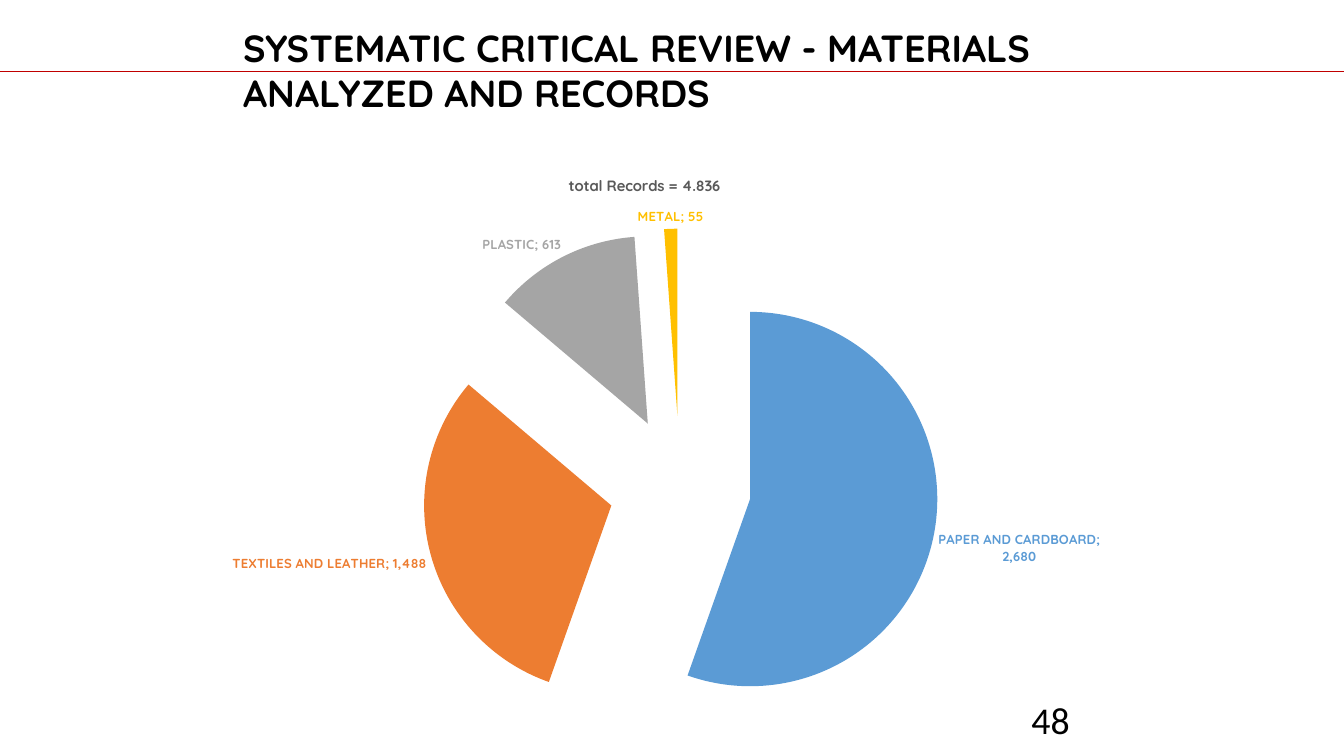
from dataclasses import dataclass

from pptx import Presentation
from pptx.chart.data import CategoryChartData
from pptx.dml.color import RGBColor
from pptx.enum.chart import XL_CHART_TYPE, XL_LABEL_POSITION
from pptx.enum.shapes import MSO_CONNECTOR
from pptx.enum.text import MSO_ANCHOR
from pptx.oxml import parse_xml
from pptx.oxml.ns import nsdecls, qn
from pptx.util import Pt


@dataclass(frozen=True)
class Theme:
    """Colours, fonts and type sizes of the deck."""
    ink: str = "000000"
    muted: str = "595959"
    rule: str = "C00000"
    slices: tuple = ("5B9BD5", "ED7D31", "A5A5A5", "FFC000")
    display: str = "Quicksand"
    plain: str = "Calibri"
    heading: float = 40.5
    caption: float = 16
    label: float = 14
    base: float = 10


THEME = Theme()
MATERIALS = {
    "PAPER AND CARDBOARD": 2680,
    "TEXTILES AND LEATHER": 1488,
    "PLASTIC": 613,
    "METAL": 55,
}


def style_font(font, name, size, color, bold=False):
    """Apply typeface, size, weight and colour to a font."""
    for key, value in {"name": name, "size": Pt(size), "bold": bold}.items():
        setattr(font, key, value)
    font.color.rgb = RGBColor.from_string(color)


def chart_element(tag, content="", **attributes):
    """Return a chart XML element with the given attributes."""
    values = " ".join(f'{key}="{value}"' for key, value in attributes.items())
    return parse_xml(f'<c:{tag} {nsdecls("c")} {values}>{content}</c:{tag}>')


def add_rule(page, box):
    """Draw the thin rule across the box."""
    left, top, width, height = box
    rule = page.shapes.add_connector(
        MSO_CONNECTOR.STRAIGHT, Pt(left), Pt(top), Pt(left + width), Pt(top + height))
    rule.line.width = Pt(0.5)
    rule.line.color.rgb = RGBColor.from_string(THEME.rule)
    properties = rule._element.spPr
    properties.append(parse_xml(f'<a:effectLst {nsdecls("a")}/>'))


def add_text(page, box, text, name, bold=False, anchor=MSO_ANCHOR.TOP):
    """Place heading-sized text in the box."""
    frame = page.shapes.add_textbox(*map(Pt, box)).text_frame
    for key, value in {"word_wrap": True, "vertical_anchor": anchor}.items():
        setattr(frame, key, value)
    span = frame.paragraphs[0].add_run()
    span.text = text
    style_font(span.font, name, THEME.heading, THEME.ink, bold)


def add_caption(chart, text):
    """Give the chart its title."""
    chart.has_title = True
    chart.chart_title.include_in_layout = False
    span = chart.chart_title.text_frame.paragraphs[0].add_run()
    span.text = text
    style_font(span.font, THEME.display, THEME.caption, THEME.muted, True)


def style_labels(labels):
    """Show category and value outside the slices."""
    settings = {
        "show_value": True,
        "show_category_name": True,
        "number_format": "#,##0",
        "number_format_is_linked": False,
        "position": XL_LABEL_POSITION.OUTSIDE_END,
    }
    for key, value in settings.items():
        setattr(labels, key, value)
    style_font(labels.font, THEME.display, THEME.label, THEME.slices[0], True)


def style_slices(series):
    """Colour every slice and its label, and pull the slices apart."""
    style_labels(series.data_labels)
    for index, color in enumerate(THEME.slices):
        point = series.points[index]
        point.format.fill.solid()
        point.format.fill.fore_color.rgb = RGBColor.from_string(color)
        style_font(point.data_label.font, THEME.display, THEME.label, color, True)
        point.data_label.position = XL_LABEL_POSITION.OUTSIDE_END
    for label in series.data_labels._element.findall(qn("c:dLbl")):
        label.find(qn("c:showCatName")).set("val", "1")
        label.insert(1, chart_element("numFmt", formatCode="#,##0", sourceLinked=0))
        label.append(chart_element("separator", "; "))
    first_point = series._element.find(qn("c:dPt"))
    first_point.addprevious(chart_element("explosion", val=38))


def place_plot(chart, x, y, w, h):
    """Fix the plot area as fractions of the chart."""
    modes = '<c:layoutTarget val="inner"/><c:xMode val="edge"/><c:yMode val="edge"/>'
    sizes = "".join(f'<c:{key} val="{value}"/>'
                    for key, value in {"x": x, "y": y, "w": w, "h": h}.items())
    plot_area = chart._chartSpace.chart.plotArea
    for layout in plot_area.findall(qn("c:layout")):
        plot_area.remove(layout)
    plot_area.insert(0, chart_element(
        "layout", f"<c:manualLayout>{modes}{sizes}</c:manualLayout>"))


def add_records_chart(page, box):
    """Place the exploded pie of records by material in the box."""
    data = CategoryChartData(number_format="#,##0")
    data.categories = list(MATERIALS)
    data.add_series("Series 1", list(MATERIALS.values()))
    chart = page.shapes.add_chart(XL_CHART_TYPE.PIE, *map(Pt, box), data).chart
    chart.has_legend = False
    style_font(chart.font, THEME.display, THEME.base, THEME.ink)
    add_caption(chart, "total Records = 4.836")
    plot = chart.plots[0]
    plot.vary_by_categories = True
    style_slices(plot.series[0])
    place_plot(chart, 0.28, 0.12, 0.51, 0.86)


def build_records_slide(deck):
    """Compose the materials and records slide."""
    page = deck.slides.add_slide(deck.slide_layouts[6])
    add_rule(page, (0, 76.3, 1440, 0))
    add_text(page, (1098, 749.5, 324, 43.2), "48", THEME.plain, anchor=MSO_ANCHOR.MIDDLE)
    add_records_chart(page, (146.2, 167.8, 1088.6, 643.7))
    add_text(page, (253.4, 23, 919.4, 105.1),
             "SYSTEMATIC CRITICAL REVIEW - MATERIALS ANALYZED AND RECORDS",
             THEME.display, bold=True)


def main():
    """Build the deck and save it."""
    deck = Presentation()
    deck.slide_width, deck.slide_height = Pt(1440), Pt(810)
    build_records_slide(deck)
    deck.save("out.pptx")


if __name__ == "__main__":
    main()
